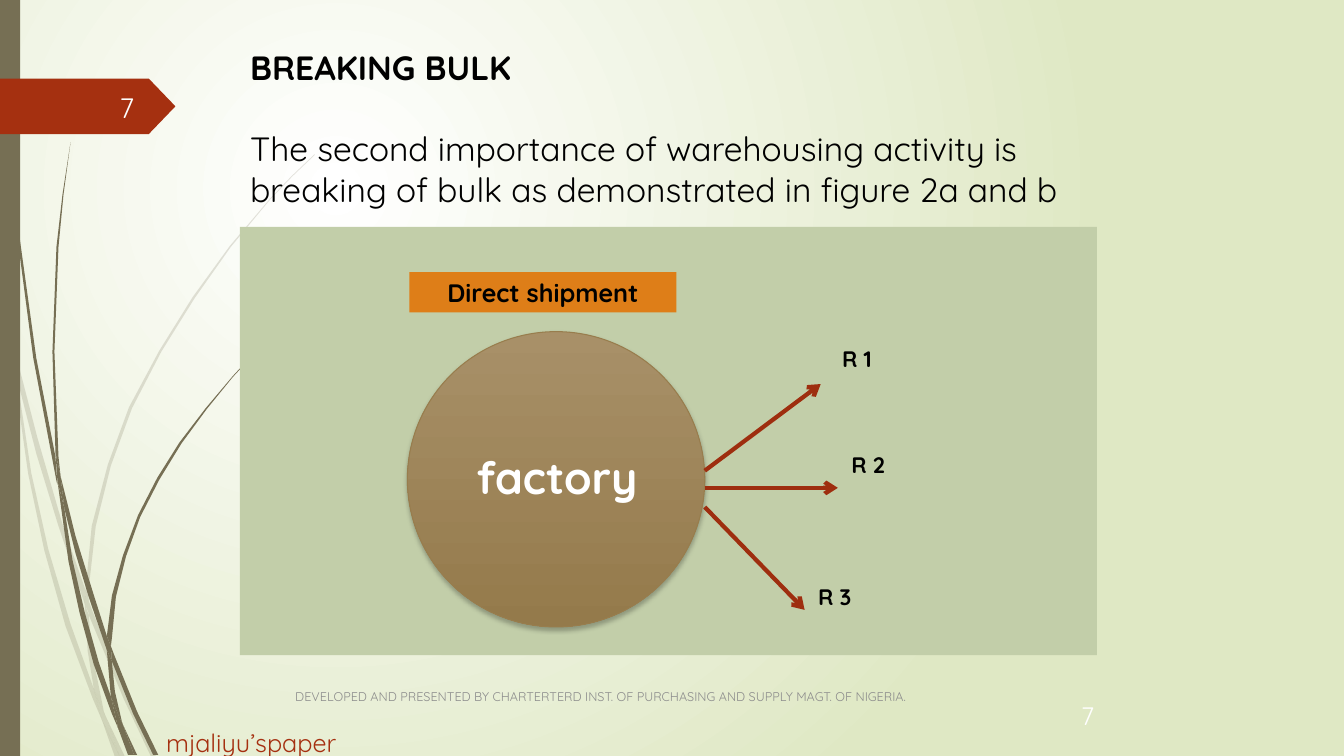
from lxml import etree
from pptx import Presentation
from pptx import util as u
from pptx.dml.color import RGBColor
from pptx.enum import shapes, text
from pptx.oxml.ns import qn

PX = 9144  # EMU in one px, 100 px to the inch
FONT = "Quicksand"
OLIVE, RUST = "766F54", "A53010"
SHAPE, ALIGN, ANCHOR = shapes.MSO_SHAPE, text.PP_ALIGN, text.MSO_ANCHOR

# Outlines of the grass blade pieces
PALE_GRASS = [
    [(11, 350), (9, 322), (0, 282), (0, 299), (10, 344)],
    [(58, 522), (84, 599), (85, 586), (62, 520), (37, 434), (14, 345), (17, 376), (36, 450)],
    [(92, 607), (88, 596), (88, 610), (123, 694), (150, 751), (155, 751), (127, 692)],
    [(119, 751), (124, 751), (105, 711)],
    [(93, 683), (70, 619), (48, 545), (31, 469), (17, 376), (11, 350), (28, 470), (44, 546),
     (65, 621), (92, 693), (101, 714), (99, 707)],
    [(84, 599), (87, 646), (93, 683), (96, 692), (105, 711), (103, 706), (91, 646), (88, 610)],
    [(88, 584), (95, 522), (110, 462), (131, 405), (160, 349), (193, 296), (229, 245), (268, 198),
     (290, 175), (312, 154), (312, 153), (289, 175), (268, 197), (228, 244), (191, 295), (158, 348),
     (128, 404), (107, 461), (91, 522), (85, 584), (85, 586), (88, 596)],
    [(101, 714), (114, 751), (119, 751)],
    [(88, 608), (88, 596), (85, 586), (84, 599)],
    [(96, 692), (93, 683), (99, 707), (101, 714), (119, 751), (105, 711)],
]
DARK_GRASS = [
    [(7, 110), (17, 233), (33, 355), (56, 477), (57, 481), (55, 453), (36, 355), (19, 232),
     (8, 109), (5, 48), (4, 0), (3, 0), (4, 48)],
    [(88, 592), (106, 645), (106, 631), (93, 590), (75, 532), (60, 472), (64, 505), (75, 549)],
    [(113, 649), (110, 641), (111, 656), (132, 708), (152, 749), (157, 749), (136, 706)],
    [(110, 691), (98, 657), (84, 607), (72, 556), (64, 505), (57, 477), (68, 557), (79, 608),
     (93, 659), (111, 708), (117, 722), (116, 717)],
    [(60, 472), (58, 453), (54, 349), (58, 245), (63, 193), (70, 141), (62, 193), (56, 245),
     (52, 349), (55, 449)],
    [(133, 749), (136, 749), (122, 719)],
    [(57, 477), (64, 505), (60, 472), (55, 449)],
    [(111, 633), (115, 592), (125, 552), (139, 513), (158, 476), (180, 440), (205, 406), (231, 374),
     (245, 359), (261, 344), (260, 344), (245, 358), (231, 373), (204, 405), (178, 439), (156, 474),
     (137, 511), (122, 551), (111, 591), (106, 631), (110, 641)],
    [(117, 722), (127, 749), (131, 749)],
    [(106, 645), (110, 691), (116, 706), (122, 719), (121, 716), (114, 686), (111, 656)],
    [(106, 645), (111, 656), (110, 641), (106, 631)],
    [(116, 706), (110, 691), (116, 717), (117, 722), (130, 749), (133, 749), (122, 719)],
]


def px(*lengths):
    return [u.Emu(length * PX) for length in lengths]


def rgb(value):
    return RGBColor.from_string(value)


def add_xml(parent, tag, **attributes):
    return etree.SubElement(parent, qn(tag), attributes)


def set_gradient(fill, colours):
    fill.gradient()
    for stop, colour in zip(fill.gradient_stops, colours):
        stop.color.rgb = rgb(colour)


def write(paragraph, words, size, colour, align=ALIGN.LEFT, bold=False):
    paragraph.text = words
    paragraph.alignment = align
    for name, value in {"name": FONT, "size": u.Pt(size), "bold": bold}.items():
        setattr(paragraph.font, name, value)
    paragraph.font.color.rgb = rgb(colour)


def set_frame(frame, anchor):
    values = {"word_wrap": True, "auto_size": text.MSO_AUTO_SIZE.NONE, "vertical_anchor": anchor}
    for name, value in values.items():
        setattr(frame, name, value)


def add_label(slide, box, *style, anchor=ANCHOR.TOP, **options):
    label = slide.shapes.add_textbox(*px(*box))
    set_frame(label.text_frame, anchor)
    write(label.text_frame.paragraphs[0], *style, **options)


def style_shape(shape, colour):
    shape.shadow.inherit = False
    shape.fill.solid()
    shape.fill.fore_color.rgb = rgb(colour)
    shape.line.fill.background()
    return shape


def add_block(slide, kind, box, colour):
    return style_shape(slide.shapes.add_shape(kind, *px(*box)), colour)


def add_grass(slide, left, top, outline, opacity):
    points = [(left + x, top + y) for x, y in outline]
    builder = slide.shapes.build_freeform(*points[0], scale=PX)
    builder.add_line_segments(points[1:], close=True)
    piece = style_shape(builder.convert_to_shape(), OLIVE)
    add_xml(piece.element.spPr.find(".//" + qn("a:srgbClr")), "a:alpha", val=str(opacity * 1000))


def draw_backdrop(slide, box):
    left, top, width, height = box
    # Radial page gradient
    set_gradient(slide.background.fill, ["FFFFFF", "DFE8C4"])
    gradient = slide.element.find(".//" + qn("a:gradFill"))
    circle = etree.Element(qn("a:path"), {"path": "circle"})
    add_xml(circle, "a:fillToRect", l="50000", t="50000", r="100000", b="100000")
    gradient.replace(gradient.find(qn("a:lin")), circle)
    # Grass and side band
    for pieces, opacity in ((PALE_GRASS, 20), (DARK_GRASS, 100)):
        for outline in pieces:
            add_grass(slide, left, top, outline, opacity)
    add_block(slide, SHAPE.RECTANGLE, (left, top, 20, height), OLIVE)
    # Page number tag
    tag = add_block(slide, SHAPE.PENTAGON, (left, top + 78, 174, 55), RUST)
    tag.adjustments[0] = 0.48
    add_label(slide, (left + 58, top + 86, 85, 40), "7", 20, "FEFFFF", ALIGN.RIGHT,
              anchor=ANCHOR.MIDDLE)


def draw_heading(slide, box):
    title = slide.shapes.title
    title.left, title.top, title.width, title.height = px(*box)
    title.element.getparent().append(title.element)  # to the front
    frame = title.text_frame
    set_frame(frame, ANCHOR.TOP)
    write(frame.paragraphs[0], "BREAKING BULK", 24, "000000", bold=True)
    sentence = frame.add_paragraph()
    write(sentence, "The second importance of warehousing activity is breaking of bulk "
          "as demonstrated in figure 2a and b", 24, "000000")
    for paragraph, gap in zip(frame.paragraphs, (0, 29)):
        paragraph.line_spacing = 1.0
        paragraph.space_before = u.Pt(gap)


def draw_shipment(slide, box):
    left, top = box[:2]
    add_block(slide, SHAPE.RECTANGLE, box, "C2CEA9")
    # Factory
    factory = add_block(slide, SHAPE.OVAL, (left + 166, top + 104, 295, 293), "A89068")
    set_gradient(factory.fill, ["A89068", "947A4B"])
    factory.fill.gradient_angle = 270
    factory.line.color.rgb = rgb("987D4D")
    factory.line.width = u.Pt(0.75)
    shadow = add_xml(factory.element.spPr.find(qn("a:effectLst")), "a:outerShdw",
                     blurRad=str(u.Pt(3)), dist=str(u.Pt(2)), dir="5400000", rotWithShape="0")
    add_xml(add_xml(shadow, "a:srgbClr", val="000000"), "a:alpha", val="25000")
    add_label(slide, (left + 183, top + 216, 263, 64), "factory", 32, "FFFFFF",
              ALIGN.CENTER, bold=True)
    # Retailers: arrow start height, arrow end, label corner
    retailers = [("R 1", 242, (576, 156), (560, 113)),
                 ("R 2", 259, (593, 259), (571, 218)),
                 ("R 3", 278, (560, 380), (538, 349))]
    for name, start, (end_x, end_y), (label_x, label_y) in retailers:
        arrow = slide.shapes.add_connector(
            shapes.MSO_CONNECTOR.STRAIGHT,
            *px(left + 461, top + start, left + end_x, top + end_y))
        arrow.line.color.rgb = rgb("9E2E0F")
        arrow.line.width = u.Pt(3)
        add_xml(arrow.element.spPr.find(qn("a:ln")), "a:tailEnd", type="arrow")
        add_xml(arrow.element.spPr, "a:effectLst")
        add_label(slide, (left + label_x, top + label_y, 104, 77), name, 16, "000000",
                  ALIGN.CENTER, bold=True)
    # Caption
    caption = add_block(slide, SHAPE.RECTANGLE, (left + 168, top + 45, 265, 40), "DE7E18")
    set_frame(caption.text_frame, ANCHOR.MIDDLE)
    write(caption.text_frame.paragraphs[0], "Direct shipment", 18, "000000",
          ALIGN.CENTER, bold=True)


def draw_footer(slide, box):
    left, top = box[:2]
    add_label(slide, (left + 128, top, 833, 40), "DEVELOPED AND PRESENTED BY CHARTERTERD INST. "
              "OF PURCHASING AND SUPPLY MAGT. OF NIGERIA.", 9, "8C8C8C", anchor=ANCHOR.MIDDLE)
    add_label(slide, (left + 840, top + 19, 100, 40), "7", 18, "FFFFFF", ALIGN.RIGHT,
              anchor=ANCHOR.MIDDLE)
    add_label(slide, (left, top + 46, 192, 40), "mjaliyu’spaper", 18, RUST)


presentation = Presentation()
presentation.slide_width, presentation.slide_height = px(1333, 750)
slide = presentation.slides.add_slide(presentation.slide_layouts[5])
draw_backdrop(slide, (0, 0, 1333, 750))
draw_shipment(slide, (238, 225, 850, 425))
draw_heading(slide, (238, 42, 850, 212))
draw_footer(slide, (155, 671, 961, 79))
presentation.save("out.pptx")
